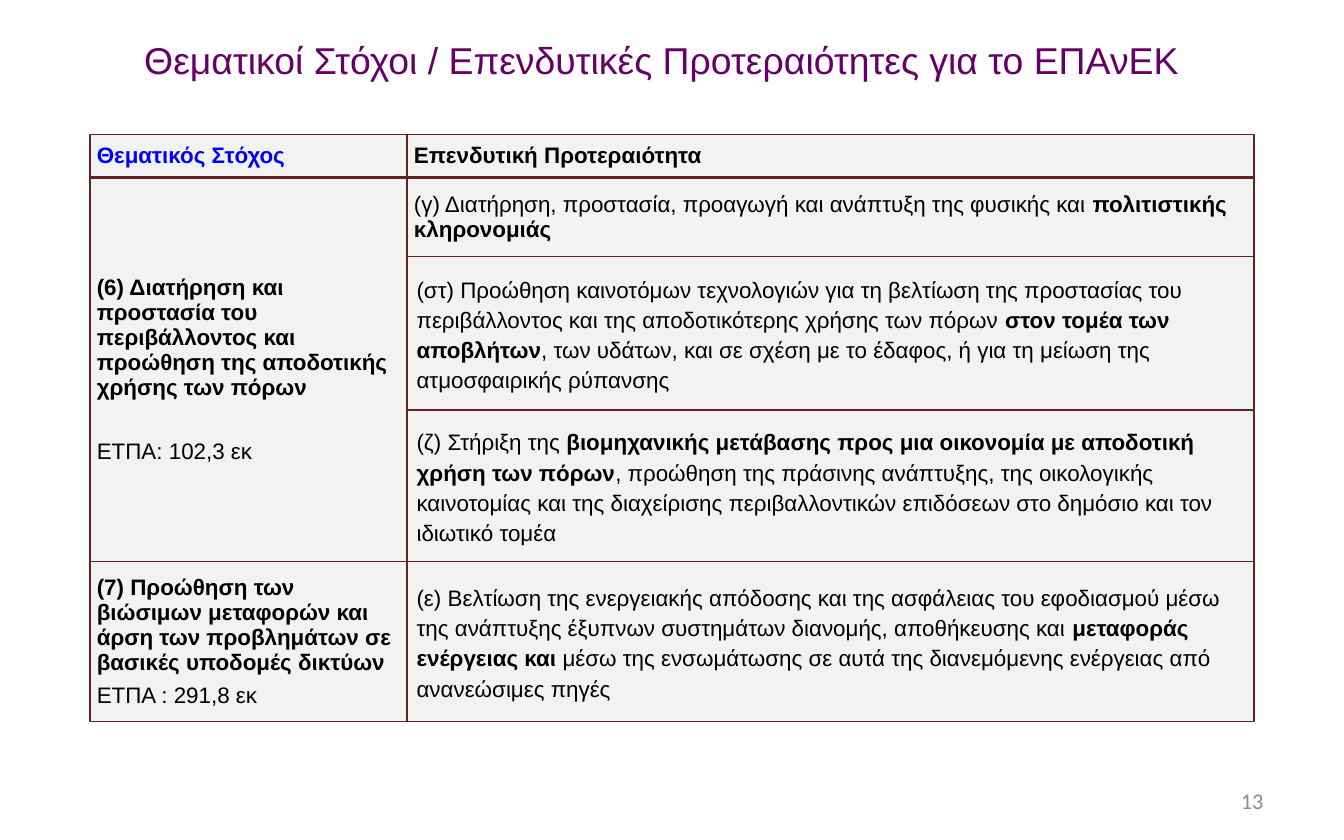
from lxml.etree import SubElement
from pptx import Presentation
from pptx.dml.color import RGBColor
from pptx.enum.text import MSO_ANCHOR, PP_ALIGN
from pptx.oxml.ns import qn
from pptx.util import Inches, Pt

TITLE = "Θεματικοί Στόχοι / Επενδυτικές Προτεραιότητες για το ΕΠΑνΕΚ"
HEADERS = [("Θεματικός Στόχος", "0000FF"), ("Επενδυτική Προτεραιότητα", "000000")]
OBJECTIVES = [
    (1, 3, 19, "**(6) Διατήρηση και προστασία του περιβάλλοντος και προώθηση της "
     "αποδοτικής χρήσης των πόρων**", "ΕΤΠΑ: 102,3 εκ"),
    (4, 4, 2, "**(7) Προώθηση των βιώσιμων μεταφορών και άρση των προβλημάτων σε "
     "βασικές υποδομές δικτύων**", "ΕΤΠΑ : 291,8 εκ"),
]
FIRST_PRIORITY = ("(γ) Διατήρηση, προστασία, προαγωγή και ανάπτυξη της φυσικής και "
                  "**πολιτιστικής κληρονομιάς**")
OTHER_PRIORITIES = [
    "(στ) Προώθηση καινοτόμων τεχνολογιών για τη βελτίωση της προστασίας του "
    "περιβάλλοντος και της αποδοτικότερης χρήσης των πόρων **στον τομέα των "
    "αποβλήτων**, των υδάτων, και σε σχέση με το έδαφος, ή για τη μείωση της "
    "ατμοσφαιρικής ρύπανσης",
    "(ζ) Στήριξη της **βιομηχανικής μετάβασης προς μια οικονομία με αποδοτική χρήση "
    "των πόρων**, προώθηση της πράσινης ανάπτυξης, της οικολογικής καινοτομίας και "
    "της διαχείρισης περιβαλλοντικών επιδόσεων στο δημόσιο και τον ιδιωτικό τομέα",
    "(ε) Βελτίωση της ενεργειακής απόδοσης και της ασφάλειας του εφοδιασμού μέσω της "
    "ανάπτυξης έξυπνων συστημάτων διανομής, αποθήκευσης και **μεταφοράς ενέργειας "
    "και **μέσω της ενσωμάτωσης σε αυτά της διανεμόμενης ενέργειας από ανανεώσιμες "
    "πηγές",
]


def color(value):
    return RGBColor.from_string(value)


class SlideBuilder:
    font = "Arial"
    cell_fill = "F2F2F2"
    border = "602320"

    def __init__(self, presentation):
        self.slide = presentation.slides.add_slide(presentation.slide_layouts[5])

    def format_paragraph(self, paragraph, size, font_color, font=font, align=PP_ALIGN.LEFT):
        paragraph.alignment = align
        paragraph.font.size = Pt(size)
        paragraph.font.name = font
        paragraph.font.color.rgb = color(font_color)

    def title(self, text, left, top, width, height):
        shape = self.slide.shapes.title
        shape.left, shape.top = Inches(left), Inches(top)
        shape.width, shape.height = Inches(width), Inches(height)
        frame = shape.text_frame
        frame.margin_left = frame.margin_right = frame.margin_top = frame.margin_bottom = 0
        frame.vertical_anchor = MSO_ANCHOR.MIDDLE
        frame.text = text
        self.format_paragraph(frame.paragraphs[0], 20, "660066", align=PP_ALIGN.CENTER)

    def page_number(self, text, left, top, width, height):
        shape = self.slide.shapes.add_textbox(
            Inches(left), Inches(top), Inches(width), Inches(height))
        frame = shape.text_frame
        frame.word_wrap = True
        frame.vertical_anchor = MSO_ANCHOR.MIDDLE
        frame.text = text
        self.format_paragraph(frame.paragraphs[0], 12, "8C8C8C", "Calibri", PP_ALIGN.RIGHT)

    def table(self, left, top, columns, rows):
        shape = self.slide.shapes.add_table(
            len(rows), len(columns), Inches(left), Inches(top),
            Inches(sum(columns)), Inches(sum(rows)))
        table = shape.table
        table.first_row = table.horz_banding = False
        for column, width in zip(table.columns, columns):
            column.width = Inches(width)
        for index, (row, height) in enumerate(zip(table.rows, rows)):
            row.height = Inches(height)
            for cell in row.cells:
                self.cell_borders(cell, 2 if index == 1 else 1, 2 if index == 0 else 1)
                cell.fill.solid()
                cell.fill.fore_color.rgb = color(self.cell_fill)
        return table

    def cell_borders(self, cell, top, bottom):
        properties = cell._tc.get_or_add_tcPr()
        for tag, width in (("lnL", 1), ("lnR", 1), ("lnT", top), ("lnB", bottom)):
            line = SubElement(properties, qn(f"a:{tag}"), w=str(Pt(width)))
            fill = SubElement(line, qn("a:solidFill"))
            SubElement(fill, qn("a:srgbClr"), val=self.border)

    def cell_text(self, cell, texts, font_color="000000", margin=0.05, spacing=2,
                  line_spacing=None, gap=2):
        cell.margin_left = cell.margin_right = Inches(margin)
        cell.margin_top = cell.margin_bottom = 0
        cell.vertical_anchor = MSO_ANCHOR.MIDDLE
        frame = cell.text_frame
        for index, text in enumerate(texts):
            paragraph = frame.add_paragraph() if index else frame.paragraphs[0]
            self.format_paragraph(paragraph, 12, font_color)
            paragraph.space_before = Pt(gap if index else spacing)
            paragraph.space_after = Pt(spacing)
            paragraph.line_spacing = line_spacing
            for part, words in enumerate(text.split("**")):
                if words:
                    run = paragraph.add_run()
                    run.text = words
                    run.font.bold = part % 2 == 1


def main():
    presentation = Presentation()
    presentation.slide_width = Inches(10)
    presentation.slide_height = Inches(6.25)
    builder = SlideBuilder(presentation)
    builder.page_number("13", 7.17, 5.79, 2.33, 0.33)
    builder.title(TITLE, 0.51, 0.24, 8.83, 0.4)
    table = builder.table(0.67, 1, [2.36, 6.3], [0.32, 0.59, 1.14, 1.13, 1.19])
    for column, (text, font_color) in enumerate(HEADERS):
        builder.cell_text(table.cell(0, column), [f"**{text}**"], font_color)
    for first, last, gap, objective, budget in OBJECTIVES:
        cell = table.cell(first, 0)
        if last > first:
            cell.merge(table.cell(last, 0))
        builder.cell_text(cell, [objective, budget], gap=gap)
    builder.cell_text(table.cell(1, 1), [FIRST_PRIORITY])
    for row, priority in enumerate(OTHER_PRIORITIES, start=2):
        builder.cell_text(table.cell(row, 1), [priority], margin=0.07, spacing=6,
                          line_spacing=1.2, gap=6)
    presentation.save("out.pptx")


if __name__ == "__main__":
    main()
